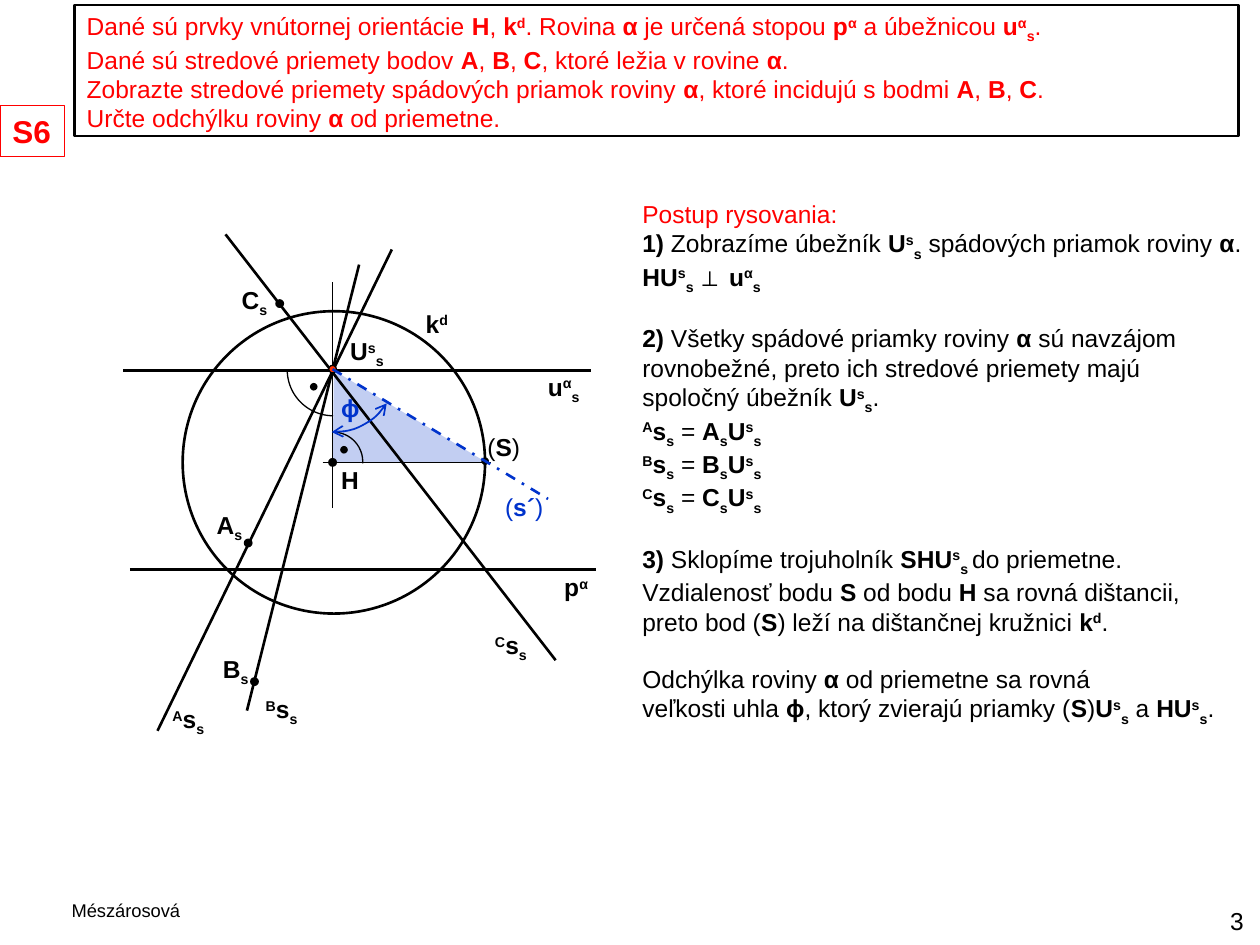
import dataclasses
import lxml.etree
import pptx
import pptx.dml.color
import pptx.enum.dml
import pptx.enum.shapes
import pptx.enum.text
import pptx.oxml.ns
import pptx.util

Inches = pptx.util.Inches
Pt = pptx.util.Pt
Kind = pptx.enum.shapes.MSO_SHAPE
Anchor = pptx.enum.text.MSO_ANCHOR
Align = pptx.enum.text.PP_ALIGN
qn = pptx.oxml.ns.qn


@dataclasses.dataclass(frozen=True)
class Theme:
    font: str = "Arial"
    black: str = "000000"
    white: str = "FFFFFF"
    red: str = "FF0000"
    orange: str = "FF3300"
    blue: str = "0033CC"
    body: float = 14
    badge: float = 18
    foot: float = 10.5
    thin: float = 0.75
    mid: float = 1
    bold: float = 1.5
    gap: float = 16


THEME = Theme()
MARKS = {"^": "30000", "_": "-25000"}

TASK = [
    "Dané sú prvky vnútornej orientácie *H*, *k^d^*. Rovina *α* je určená stopou *p^α^* a úbežnicou *u^α^_s_*.",
    "Dané sú stredové priemety bodov *A*, *B*, *C*, ktoré ležia v rovine *α*.",
    "Zobrazte stredové priemety spádových priamok roviny *α*, ktoré incidujú s bodmi *A*, *B*, *C*.",
    "Určte odchýlku roviny *α* od priemetne.",
]
STEPS = [
    ["Postup rysovania:",
     "*1)* Zobrazíme úbežník *U^s^_s_* spádových priamok roviny *α*.",
     "*HU^s^_s _*⊥ *u^α^_s_*"],
    ["*2)* Všetky spádové priamky roviny *α* sú navzájom rovnobežné, preto ich stredové priemety majú",
     "spoločný úbežník *U^s^_s_*.",
     *(f"*^{name}^s_s_* = *{name}_s_U^s^_s_*" for name in "ABC")],
    ["*3)* Sklopíme trojuholník *SHU^s^_s _*do priemetne.",
     "Vzdialenosť bodu *S* od bodu *H* sa rovná dištancii,",
     "preto bod (*S*) leží na dištančnej kružnici *k^d^*."],
    ["Odchýlka roviny *α* od priemetne sa rovná",
     "veľkosti uhla *ϕ*, ktorý zvierajú priamky (*S*)*U^s^_s_* a *HU^s^_s_*."],
]
LABELS = [
    ("*p^α^*", 4.38, 4.49, 0.44), ("*H*", 2.61, 3.64, 0.34),
    ("*U^s^_s_*", 2.68, 2.62, 0.49), ("*u^α^_s_*", 4.25, 2.9, 0.48),
    ("*^C^s_s_*", 3.83, 4.95, 0.48), ("*^A^s_s_*", 1.27, 5.54, 0.48),
    ("*^B^s_s_*", 2.01, 5.46, 0.48), ("*A_s_*", 1.62, 4, 0.42),
    ("*B_s_*", 1.67, 5.14, 0.42), ("*C_s_*", 1.82, 2.21, 0.42),
    ("*k^d^*", 3.28, 2.4, 0.39), ("(*S*)", 3.77, 3.38, 0.46),
]
LINES = [
    (0.98, 2.94, 4.69, 2.94, THEME.bold), (1.79, 1.86, 4.41, 5.24, THEME.bold),
    (2.64, 2.24, 2.64, 4.03, THEME.thin), (3.11, 1.98, 1.25, 5.8, THEME.bold),
    (2.85, 2.1, 1.96, 5.64, THEME.bold), (1.03, 4.52, 4.73, 4.52, THEME.bold),
    (2.56, 3.67, 3.9, 3.67, THEME.thin),
]
POINTS = [(2.64, 3.67), (1.97, 4.31), (2.02, 5.41), (2.22, 2.41)]
SMALL = [(2.49, 3.07), (2.73, 3.57), (3.85, 3.66)]


def rgb(code):
    return pptx.dml.color.RGBColor.from_string(code)


def paint(shape, fill=None, line=None, width=THEME.thin, alpha=None):
    shape.shadow.inherit = False
    if fill:
        shape.fill.solid()
        shape.fill.fore_color.rgb = rgb(fill)
        if alpha:
            tone = shape.fill._xPr.find(".//" + qn("a:srgbClr"))
            lxml.etree.SubElement(tone, qn("a:alpha"), val=str(alpha * 1000))
    else:
        shape.fill.background()
    if line:
        shape.line.color.rgb = rgb(line)
        shape.line.width = Pt(width)
    else:
        shape.line.fill.background()


def add_runs(para, text):
    bold, base, part = False, None, ""
    for sign in text + "*":
        if sign != "*" and sign not in MARKS:
            part += sign
            continue
        if part:
            run = para.add_run()
            run.text = part
            run.font.bold = bold
            if base:
                run.font._element.set("baseline", MARKS[base])
            part = ""
        if sign == "*":
            bold = not bold
        else:
            base = None if base else sign


def write(shape, rows, color=THEME.black, size=THEME.body, wrap=False,
          anchor=Anchor.TOP, align=Align.LEFT):
    frame = shape.text_frame
    frame.word_wrap = wrap
    frame.vertical_anchor = anchor
    for spot, row in enumerate(rows):
        para = frame.add_paragraph() if spot else frame.paragraphs[0]
        para.alignment = align
        para.font.name = THEME.font
        para.font.size = Pt(size)
        para.font.color.rgb = rgb(color)
        add_runs(para, row)
    return frame


def add_text(slide, rows, x, y, w, h=0.34, **style):
    box = slide.shapes.add_textbox(Inches(x), Inches(y), Inches(w), Inches(h))
    return write(box, rows, **style)


def add_form(slide, kind, x, y, w, h, **look):
    shape = slide.shapes.add_shape(kind, Inches(x), Inches(y), Inches(w), Inches(h))
    paint(shape, **look)
    return shape


def add_dot(slide, x, y, size, fill=THEME.black):
    add_form(slide, Kind.OVAL, x - size / 2, y - size / 2, size, size,
             fill=fill, line=THEME.black)


def add_arc(slide, x, y, size, start, end, **look):
    arc = add_form(slide, Kind.ARC, x, y, size, size, **look)
    for spot, angle in enumerate((start, end)):
        arc.adjustments[spot] = angle * 0.6
    return arc


def add_line(slide, x1, y1, x2, y2, width, color=THEME.black):
    line = slide.shapes.add_connector(
        pptx.enum.shapes.MSO_CONNECTOR.STRAIGHT,
        Inches(x1), Inches(y1), Inches(x2), Inches(y2))
    line.line.color.rgb = rgb(color)
    line.line.width = Pt(width)
    lxml.etree.SubElement(line._element.spPr, qn("a:effectLst"))
    return line


def add_wedge(slide):
    pen = slide.shapes.build_freeform(Inches(2.65), Inches(2.94))
    pen.add_line_segments([(Inches(3.86), Inches(3.67)), (Inches(2.64), Inches(3.67))])
    paint(pen.convert_to_shape(), fill=THEME.blue, alpha=24)


def add_steps(slide):
    rows = [row for group in STEPS for row in group]
    frame = add_text(slide, rows, 5, 1.53, 4.97, 4.11, wrap=True)
    frame.paragraphs[0].font.color.rgb = rgb(THEME.red)
    spot = 0
    for group in STEPS[:-1]:
        spot += len(group)
        frame.paragraphs[spot].space_before = Pt(THEME.gap)


def add_figure(slide):
    add_wedge(slide)
    for row in LINES:
        add_line(slide, *row)
    add_form(slide, Kind.OVAL, 1.45, 2.47, 2.4, 2.4, line=THEME.black, width=THEME.bold)
    add_dot(slide, 2.64, 2.93, 0.06, THEME.orange)
    for x, y in POINTS:
        add_dot(slide, x, y, 0.06)
    for x, y in SMALL:
        add_dot(slide, x, y, 0.05)
    add_arc(slide, 2.28, 2.57, 0.73, 90, 180, line=THEME.black)
    add_arc(slide, 2.41, 3.43, 0.47, 274, 3, line=THEME.black)
    ray = add_line(slide, 2.64, 2.93, 4.35, 3.96, THEME.bold, THEME.blue)
    ray.line.dash_style = pptx.enum.dml.MSO_LINE.DASH_DOT
    angle = add_arc(slide, 2.15, 2.43, 1, 33, 92, line=THEME.blue, width=THEME.mid)
    for end in ("a:headEnd", "a:tailEnd"):
        lxml.etree.SubElement(angle.line._ln, qn(end), type="arrow")
    for text, x, y, w in LABELS:
        add_text(slide, [text], x, y, w)
    add_text(slide, ["(*s´*)"], 3.91, 3.86, 0.51, color=THEME.blue)
    add_text(slide, ["*ϕ*"], 2.61, 3.07, 0.32, color=THEME.blue)


def main():
    deck = pptx.Presentation()
    deck.slide_width, deck.slide_height = Inches(10), Inches(7.5)
    slide = deck.slides.add_slide(deck.slide_layouts[6])
    badge = add_form(slide, Kind.RECTANGLE, 0, 0.84, 0.51, 0.4, line=THEME.red)
    write(badge, ["*S6*"], color=THEME.red, size=THEME.badge)
    task = add_form(slide, Kind.RECTANGLE, 0.59, 0.04, 9.24, 1.04, fill=THEME.white,
                    alpha=12, line=THEME.black, width=THEME.bold)
    write(task, TASK, color=THEME.red, wrap=True)
    add_figure(slide)
    add_steps(slide)
    add_text(slide, ["3"], 9.53, 7.13, 0.44, anchor=Anchor.BOTTOM, align=Align.RIGHT)
    add_text(slide, ["Mészárosová"], 0.47, 7.09, 1.08, 0.28, size=THEME.foot)
    deck.save("out.pptx")


if __name__ == "__main__":
    main()
